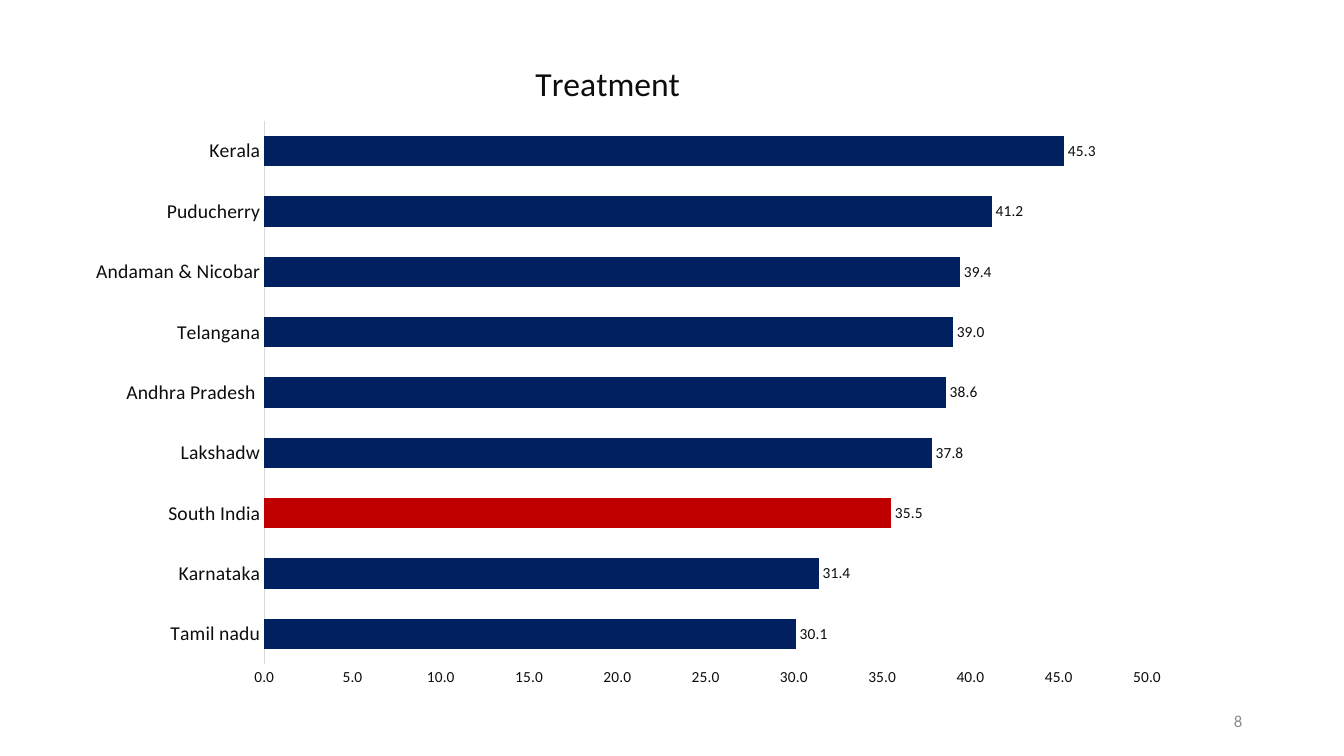
"""Build a slide with a bar chart of treatment rates across South India."""
from dataclasses import dataclass

from lxml.etree import SubElement
from pptx import Presentation
from pptx.chart.chart import Chart
from pptx.chart.data import CategoryChartData
from pptx.dml.color import RGBColor
from pptx.enum.chart import XL_CHART_TYPE as ChartType
from pptx.enum.chart import XL_LABEL_POSITION as LabelPosition
from pptx.enum.chart import XL_TICK_MARK as TickMark
from pptx.enum.text import MSO_ANCHOR as Anchor
from pptx.enum.text import PP_ALIGN as Align
from pptx.oxml.ns import qn
from pptx.slide import Slide
from pptx.text.text import Font
from pptx.util import Inches, Pt

WIDTH, HEIGHT = Inches(13.33), Inches(7.5)
FONT = "Calibri"
TOPIC = "Treatment "
DECIMAL = "0.0"
COLORS = {
    "state": "002060",
    "region": "C00000",
    "text": "0D0D0D",
    "axis": "D9D9D9",
    "page": "8C8C8C",
}


@dataclass(frozen=True)
class Box:
    """Position and size as shares of the slide."""

    left: float
    top: float
    width: float
    height: float

    def on_slide(self) -> tuple[int, int, int, int]:
        """Return the box in slide units."""
        return (
            round(self.left * WIDTH),
            round(self.top * HEIGHT),
            round(self.width * WIDTH),
            round(self.height * HEIGHT),
        )


@dataclass(frozen=True)
class Rate:
    """Treatment rate of one area."""

    area: str
    value: float
    is_region: bool = False


RATES = [
    Rate("Tamil nadu", 30.1),
    Rate("Karnataka", 31.4),
    Rate("South India", 35.5, is_region=True),
    Rate("Lakshadw", 37.8),
    Rate("Andhra Pradesh ", 38.6),
    Rate("Telangana", 39.0),
    Rate("Andaman & Nicobar", 39.4),
    Rate("Puducherry", 41.2),
    Rate("Kerala", 45.3),
]
CHART_BOX = Box(0.74 / 13.33, 0.28 / 7.5, 11 / 13.33, 6.67 / 7.5)
PAGE_BOX = Box(9.42 / 13.33, 6.95 / 7.5, 3 / 13.33, 0.4 / 7.5)


def color(name: str) -> RGBColor:
    """Look up a colour by its role."""
    return RGBColor.from_string(COLORS[name])


def style(font: Font, size: float, role: str = "text") -> None:
    """Set typeface, size and colour."""
    font.name, font.size, font.bold = FONT, Pt(size), False
    font.color.rgb = color(role)


def place(layout, **shares: float) -> None:
    """Fix a chart part at shares of the chart's size."""
    for child in list(layout):
        layout.remove(child)
    manual = SubElement(layout, qn("c:manualLayout"))
    if "w" in shares:
        SubElement(manual, qn("c:layoutTarget")).set("val", "inner")
    for mode in ("xMode", "yMode"):
        SubElement(manual, qn(f"c:{mode}")).set("val", "edge")
    for side, share in shares.items():
        SubElement(manual, qn(f"c:{side}")).set("val", str(share))


def style_axes(chart: Chart) -> None:
    """Format the area names and the rate scale."""
    areas, scale = chart.category_axis, chart.value_axis
    for axis, size in ((areas, 14), (scale, 11)):
        axis.major_tick_mark = axis.minor_tick_mark = TickMark.NONE
        axis.has_major_gridlines = False
        style(axis.tick_labels.font, size)
    areas.format.line.color.rgb = color("axis")
    areas.format.line.width = Pt(0.75)
    scale.format.line.fill.background()
    scale.minimum_scale, scale.maximum_scale, scale.major_unit = 0, 50, 5
    scale.tick_labels.number_format = DECIMAL
    scale.tick_labels.number_format_is_linked = False


def style_bars(chart: Chart) -> None:
    """Colour and label the bars, marking the whole region."""
    plot = chart.plots[0]
    plot.gap_width, plot.overlap, plot.vary_by_categories = 98, 2, False
    bars = plot.series[0]
    bars.format.fill.solid()
    bars.format.fill.fore_color.rgb = color("state")
    for index, rate in enumerate(RATES):
        if rate.is_region:
            region_fill = bars.points[index].format.fill
            region_fill.solid()
            region_fill.fore_color.rgb = color("region")
    labels = bars.data_labels
    labels.show_value = True
    labels.position = LabelPosition.OUTSIDE_END
    labels.number_format, labels.number_format_is_linked = DECIMAL, False
    style(labels.font, 11)


def add_rates(slide: Slide) -> None:
    """Draw the bar chart with its title."""
    data = CategoryChartData(number_format=DECIMAL)
    data.categories = [rate.area for rate in RATES]
    data.add_series(TOPIC, [rate.value for rate in RATES])
    chart = slide.shapes.add_chart(
        ChartType.BAR_CLUSTERED, *CHART_BOX.on_slide(), data
    ).chart
    style(chart.font, 10)
    chart.has_legend = False
    chart.has_title = True
    heading = chart.chart_title.text_frame
    heading.text = TOPIC
    style(heading.paragraphs[0].font, 24)
    style_axes(chart)
    style_bars(chart)

    for title_layout in chart.element.xpath("c:chart/c:title/c:layout"):
        place(title_layout, x=0.41, y=0.04)
    plot_area = chart.element.xpath("c:chart/c:plotArea")[0]
    plot_layout = plot_area.find(qn("c:layout"))
    if plot_layout is None:
        plot_layout = SubElement(plot_area, qn("c:layout"))
        plot_area.insert(0, plot_layout)
    place(plot_layout, x=0.171, y=0.138, w=0.796, h=0.808)


def add_page_number(slide: Slide) -> None:
    """Write the page number at the bottom right."""
    frame = slide.shapes.add_textbox(*PAGE_BOX.on_slide()).text_frame
    frame.word_wrap = True
    frame.vertical_anchor = Anchor.MIDDLE
    number = frame.paragraphs[0]
    number.text = "8"
    number.alignment = Align.RIGHT
    style(number.font, 12, "page")


def main() -> None:
    """Build and save the presentation."""
    deck = Presentation()
    deck.slide_width, deck.slide_height = WIDTH, HEIGHT
    slide = deck.slides.add_slide(deck.slide_layouts.get_by_name("Blank"))
    add_page_number(slide)
    add_rates(slide)
    deck.save("out.pptx")


if __name__ == "__main__":
    main()
